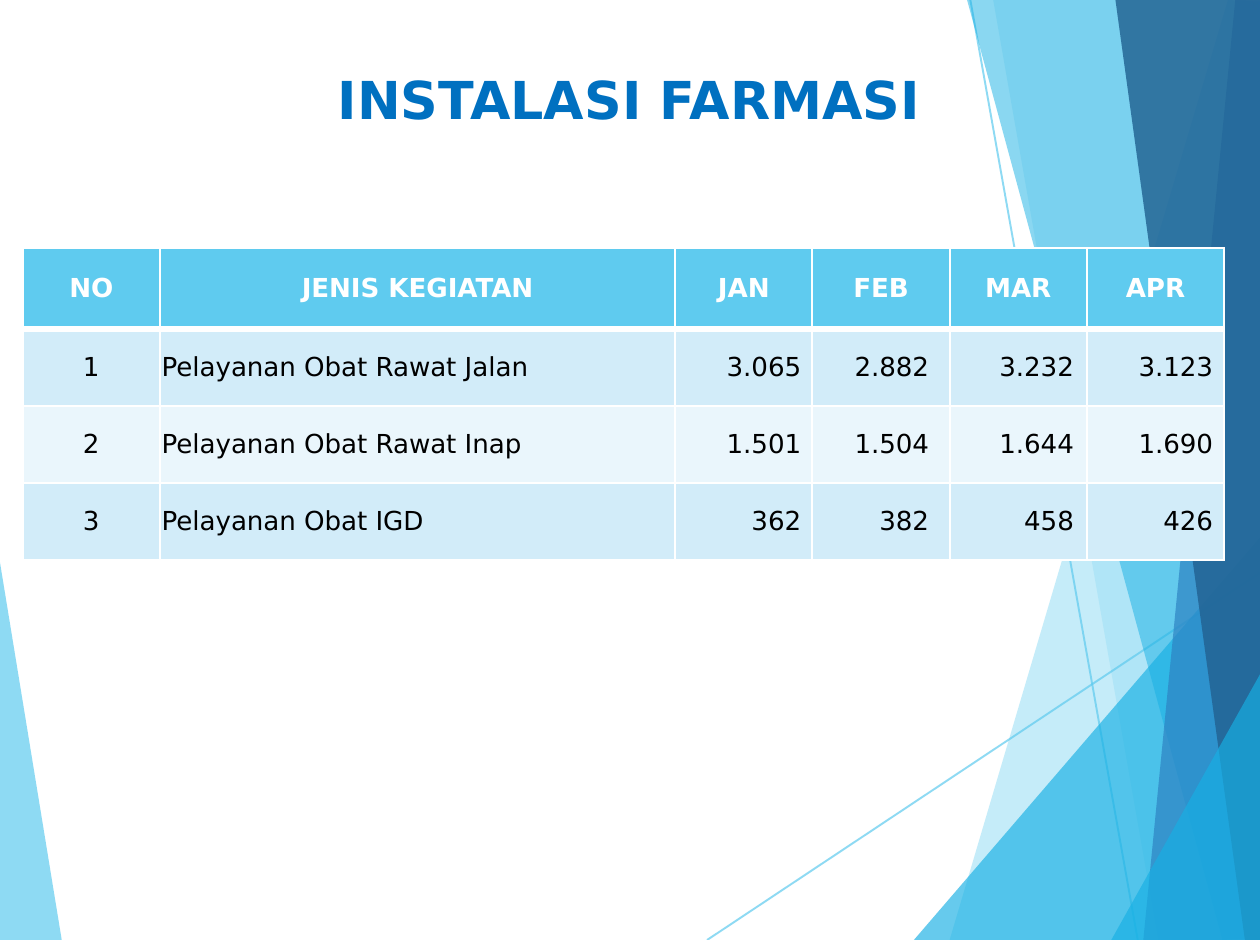
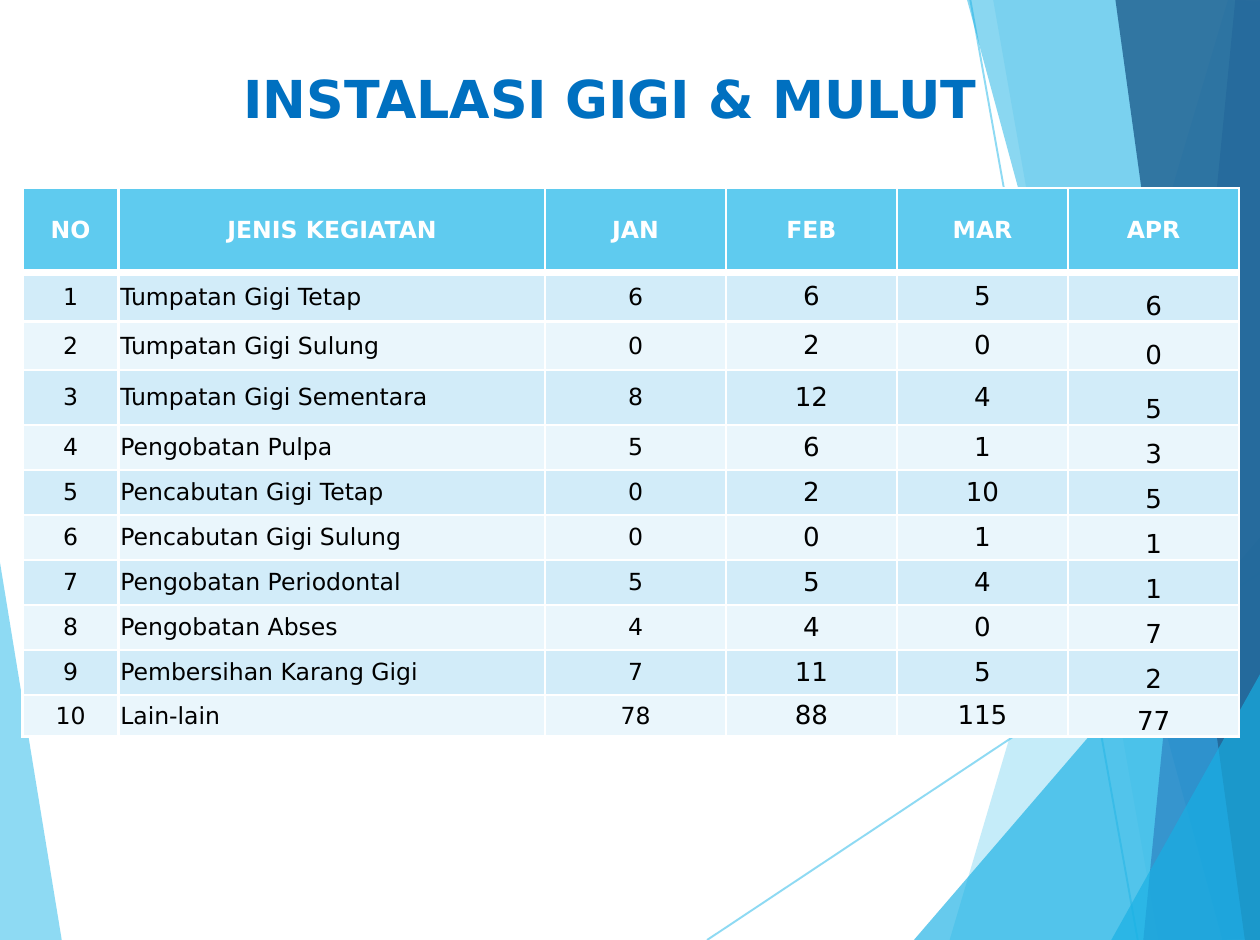
from dataclasses import dataclass
from typing import Any

from pptx import Presentation
from pptx.dml.color import RGBColor
from pptx.enum.shapes import MSO_CONNECTOR
from pptx.enum.text import MSO_ANCHOR, MSO_AUTO_SIZE, PP_ALIGN
from pptx.oxml.ns import qn
from pptx.oxml.xmlchemy import OxmlElement
from pptx.util import Inches, Pt

FONT = "DejaVu Sans"
WHITE = RGBColor(0xFF, 0xFF, 0xFF)
BLACK = RGBColor(0x00, 0x00, 0x00)
TITLE_BLUE = RGBColor(0x00, 0x70, 0xC0)
SKY = RGBColor(0x5F, 0xCB, 0xEF)
CYAN = RGBColor(0x17, 0xB0, 0xE4)
BLUE = RGBColor(0x2E, 0x83, 0xC3)
NAVY = RGBColor(0x22, 0x62, 0x92)
BANDS = (RGBColor(0xD2, 0xEC, 0xF9), RGBColor(0xEA, 0xF6, 0xFC))

Point = tuple[float, float]


@dataclass
class Facet:
    points: list[Point]
    color: RGBColor
    opacity: int


@dataclass
class Ray:
    start: Point
    end: Point


@dataclass
class Column:
    heading: str
    width: float
    size: int
    align: PP_ALIGN = PP_ALIGN.CENTER
    right: float = 0.01
    anchor: MSO_ANCHOR = MSO_ANCHOR.MIDDLE


@dataclass
class Report:
    title: str
    title_box: tuple[float, float, float, float]
    table_top: float
    heading_size: int
    columns: list[Column]
    heights: list[float]
    rows: list[tuple[str, ...]]


# Shared background, from back to front
BACKDROP: list[Facet | Ray] = [
    Facet([(-0.01, 2.93), (0.33, 5.01), (-0.01, 5)], SKY, 70),
    Ray((3.76, 5), (6.71, 3.04)),
    Ray((5.16, 0), (6.05, 5)),
    Facet([(6.53, 0), (5.05, 5), (6.71, 5.01), (6.71, 0.01)], SKY, 36),
    Facet([(5.28, -0.01), (6.16, 5), (6.71, 5), (6.71, -0.01)], SKY, 20),
    Facet([(4.86, 5), (6.7, 2.86), (6.71, 5)], CYAN, 66),
    Facet([(5.14, -0.01), (6.5, 5), (6.71, 4.99), (6.71, -0.01)], CYAN, 50),
    Facet([(6.57, -0.01), (6.08, 5), (6.71, 5), (6.7, -0.01)], BLUE, 70),
    Facet([(5.93, -0.01), (6.62, 5), (6.71, 5), (6.7, -0.01)], NAVY, 82),
    Facet([(5.91, 5), (6.71, 3.57), (6.71, 5)], CYAN, 66),
]

PHARMACY = Report(
    "INSTALASI FARMASI", (0.33, 0.31, 6.03, 0.83), 1.32, 10,
    [
        Column("NO", 0.73, 10),
        Column("JENIS KEGIATAN", 2.74, 10, PP_ALIGN.LEFT),
        Column("JAN", 0.73, 10, PP_ALIGN.RIGHT, 0.06),
        Column("FEB", 0.73, 10, PP_ALIGN.RIGHT, 0.11),
        Column("MAR", 0.73, 10, PP_ALIGN.RIGHT, 0.07),
        Column("APR", 0.73, 10, PP_ALIGN.RIGHT, 0.06),
    ],
    [0.43] + [0.41] * 3,
    [
        ("1", "Pelayanan Obat Rawat Jalan", "3.065", "2.882", "3.232", "3.123"),
        ("2", "Pelayanan Obat Rawat Inap", "1.501", "1.504", "1.644", "1.690"),
        ("3", "Pelayanan Obat IGD", "362", "382", "458", "426"),
    ],
)

DENTAL = Report(
    "INSTALASI GIGI & MULUT", (0.2, 0.3, 6.09, 0.55), 1, 9,
    [
        Column("NO", 0.51, 9),
        Column("JENIS KEGIATAN", 2.27, 9, PP_ALIGN.LEFT),
        Column("JAN", 0.96, 9),
        Column("FEB", 0.91, 10),
        Column("MAR", 0.91, 10),
        Column("APR", 0.91, 10, anchor=MSO_ANCHOR.BOTTOM),
    ],
    [0.45, 0.26, 0.26, 0.29] + [0.24] * 6 + [0.22],
    [
        ("1", "Tumpatan Gigi Tetap", "6", "6", "5", "6"),
        ("2", "Tumpatan Gigi Sulung", "0", "2", "0", "0"),
        ("3", "Tumpatan Gigi Sementara", "8", "12", "4", "5"),
        ("4", "Pengobatan Pulpa", "5", "6", "1", "3"),
        ("5", "Pencabutan Gigi Tetap", "0", "2", "10", "5"),
        ("6", "Pencabutan Gigi Sulung", "0", "0", "1", "1"),
        ("7", "Pengobatan Periodontal", "5", "5", "4", "1"),
        ("8", "Pengobatan Abses", "4", "4", "0", "7"),
        ("9", "Pembersihan Karang Gigi", "7", "11", "5", "2"),
        ("10", "Lain-lain", "78", "88", "115", "77"),
    ],
)


def apply_format(target: Any, values: dict[str, Any]) -> None:
    for attribute, value in values.items():
        setattr(target, attribute, value)


def write(frame: Any, text: str, size: int, color: RGBColor, bold: bool, align: PP_ALIGN) -> None:
    paragraph = frame.paragraphs[0]
    paragraph.alignment = align
    run = paragraph.add_run()
    run.text = text
    apply_format(run.font, {"name": FONT, "size": Pt(size), "bold": bold})
    run.font.color.rgb = color


def set_opacity(shape: Any, percent: int) -> None:
    for color in shape.element.spPr.iter(qn("a:srgbClr")):
        alpha = OxmlElement("a:alpha")
        alpha.set("val", str(percent * 1000))
        color.append(alpha)


def draw_facet(slide: Any, facet: Facet) -> Any:
    start, *rest = [(Inches(x), Inches(y)) for x, y in facet.points]
    builder = slide.shapes.build_freeform(*start)
    builder.add_line_segments(rest, close=True)
    shape = builder.convert_to_shape()
    shape.shadow.inherit = False
    shape.fill.solid()
    shape.fill.fore_color.rgb = facet.color
    shape.line.fill.background()
    set_opacity(shape, facet.opacity)
    return shape


def draw_ray(slide: Any, ray: Ray) -> Any:
    ends = [Inches(value) for value in ray.start + ray.end]
    line = slide.shapes.add_connector(MSO_CONNECTOR.STRAIGHT, *ends)
    line.line.color.rgb = SKY
    line.line.width = Pt(0.75)
    line.element.spPr.append(OxmlElement("a:effectLst"))
    set_opacity(line, 70)
    return line


def add_backdrop(slide: Any) -> None:
    """Draw the backdrop and move it to the layout, so that every slide shares it."""
    layout_tree = slide.slide_layout.shapes.element
    for number, part in enumerate(BACKDROP, start=100):
        drawn = draw_facet(slide, part) if isinstance(part, Facet) else draw_ray(slide, part)
        drawn.element.xpath(".//p:cNvPr")[0].set("id", str(number))
        layout_tree.append(drawn.element)


def set_borders(cell: Any, top: int, bottom: int) -> None:
    properties = cell._tc.get_or_add_tcPr()
    for side, width in {"L": 1, "R": 1, "T": top, "B": bottom}.items():
        border = OxmlElement(f"a:ln{side}")
        border.set("w", str(Pt(width)))
        fill = OxmlElement("a:solidFill")
        color = OxmlElement("a:srgbClr")
        color.set("val", str(WHITE))
        fill.append(color)
        border.append(fill)
        properties.append(border)


def fill_cell(cell: Any, text: str, row: int, column: Column, heading_size: int) -> None:
    heading = row == 0
    set_borders(cell, top=3 if row == 1 else 1, bottom=3 if heading else 1)
    cell.fill.solid()
    cell.fill.fore_color.rgb = SKY if heading else BANDS[(row - 1) % 2]
    if heading:
        layout = {"margin_left": Inches(0.1), "margin_right": Inches(0.1),
                  "margin_top": Inches(0.05), "margin_bottom": Inches(0.05),
                  "vertical_anchor": MSO_ANCHOR.MIDDLE}
        write(cell.text_frame, text, heading_size, WHITE, True, PP_ALIGN.CENTER)
    else:
        layout = {"margin_left": Inches(0.01), "margin_right": Inches(column.right),
                  "margin_top": Inches(0), "margin_bottom": Inches(0),
                  "vertical_anchor": column.anchor}
        write(cell.text_frame, text, column.size, BLACK, False, column.align)
    apply_format(cell, layout)


def add_report(slide: Any, report: Report) -> None:
    # Title
    title = slide.shapes.title
    box = (Inches(value) for value in report.title_box)
    apply_format(title, dict(zip(("left", "top", "width", "height"), box)))
    apply_format(title.text_frame, {"word_wrap": True, "auto_size": MSO_AUTO_SIZE.NONE,
                                    "vertical_anchor": MSO_ANCHOR.TOP})
    write(title.text_frame, report.title, 20, TITLE_BLUE, True, PP_ALIGN.CENTER)

    # Monthly activity table
    width = sum(column.width for column in report.columns)
    table = slide.shapes.add_table(
        len(report.heights), len(report.columns), Inches(0.12), Inches(report.table_top),
        Inches(width), Inches(sum(report.heights))).table
    table.horz_banding = False
    for index, column in enumerate(report.columns):
        table.columns[index].width = Inches(column.width)
    headings = tuple(column.heading for column in report.columns)
    for row, texts in enumerate([headings] + report.rows):
        table.rows[row].height = Inches(report.heights[row])
        for index, column in enumerate(report.columns):
            fill_cell(table.cell(row, index), texts[index], row, column, report.heading_size)


def main() -> None:
    deck = Presentation()
    apply_format(deck, {"slide_width": Inches(6.7), "slide_height": Inches(5)})
    title_only = deck.slide_layouts[5]
    for report in (PHARMACY, DENTAL):
        add_report(deck.slides.add_slide(title_only), report)
    add_backdrop(deck.slides[0])
    deck.save("out.pptx")


if __name__ == "__main__":
    main()
